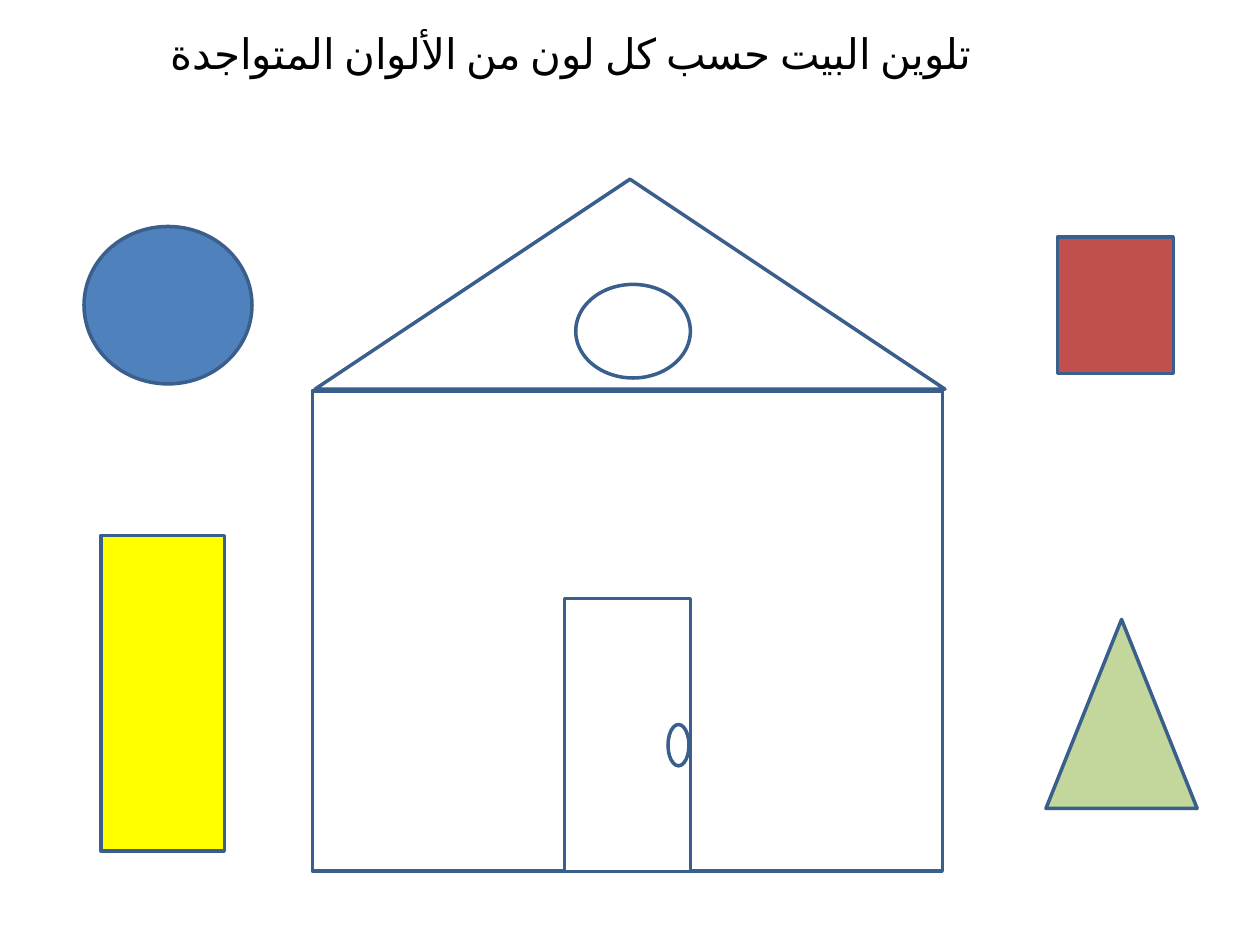
import pptx
import pptx.dml.color
import pptx.enum.lang
import pptx.enum.shapes
import pptx.enum.text
import pptx.oxml.ns
import pptx.util
import lxml.etree

Pt = pptx.util.Pt
Kind = pptx.enum.shapes.MSO_SHAPE


def color(code):
    return pptx.dml.color.RGBColor.from_string(code)


def style(item, values):
    """Set each named attribute of item to its value."""
    for name, value in values.items():
        setattr(item, name, value)


deck = pptx.Presentation()
style(deck, {"slide_width": Pt(720), "slide_height": Pt(540)})
slide = deck.slides.add_slide(deck.slide_layouts[6])

# Title, with the font for Arabic script set as well
title = slide.shapes.add_textbox(Pt(54), Pt(12.24), Pt(550), Pt(36))
style(title.text_frame, {
    "word_wrap": True,
    "auto_size": pptx.enum.text.MSO_AUTO_SIZE.SHAPE_TO_FIT_TEXT,
})
line = title.text_frame.paragraphs[0]
line.alignment = pptx.enum.text.PP_ALIGN.CENTER
run = line.add_run()
run.text = "تلوين البيت حسب كل لون من الألوان المتواجدة "
style(run.font, {
    "name": "Calibri",
    "size": Pt(24),
    "language_id": pptx.enum.lang.MSO_LANGUAGE_ID.ARABIC_ALGERIA,
})
run.font.color.rgb = color("000000")
script = lxml.etree.SubElement(run._r.rPr, pptx.oxml.ns.qn("a:cs"))
script.set("typeface", "Calibri")

# House to color in: kind, left, top, width, height, fill
white = "FFFFFF"
house = [
    (Kind.ISOSCELES_TRIANGLE, 180, 102.4, 360, 120, white),  # roof
    (Kind.RECTANGLE, 178.5, 223.3, 360, 274.5, white),  # wall
    (Kind.RECTANGLE, 322.5, 342, 72, 156, white),  # door
    (Kind.OVAL, 329, 162.5, 65.5, 53.5, white),  # window
    (Kind.OVAL, 381.7, 414, 12, 23.6, white),  # handle
]
samples = [
    (Kind.RECTANGLE, 604.3, 135.4, 66.2, 78, "C0504D"),
    (Kind.ISOSCELES_TRIANGLE, 597.7, 354, 86.4, 108, "C3D69B"),
    (Kind.OVAL, 48, 129.4, 96, 90, "4F81BD"),
    (Kind.RECTANGLE, 57.6, 306, 70.6, 180.2, "FFFF00"),
]
for kind, left, top, width, height, fill in house + samples:
    shape = slide.shapes.add_shape(kind, Pt(left), Pt(top), Pt(width), Pt(height))
    shape.shadow.inherit = False
    shape.fill.solid()
    shape.fill.fore_color.rgb = color(fill)
    shape.line.color.rgb = color("3A5F8C")
    shape.line.width = Pt(2)

deck.save("out.pptx")
